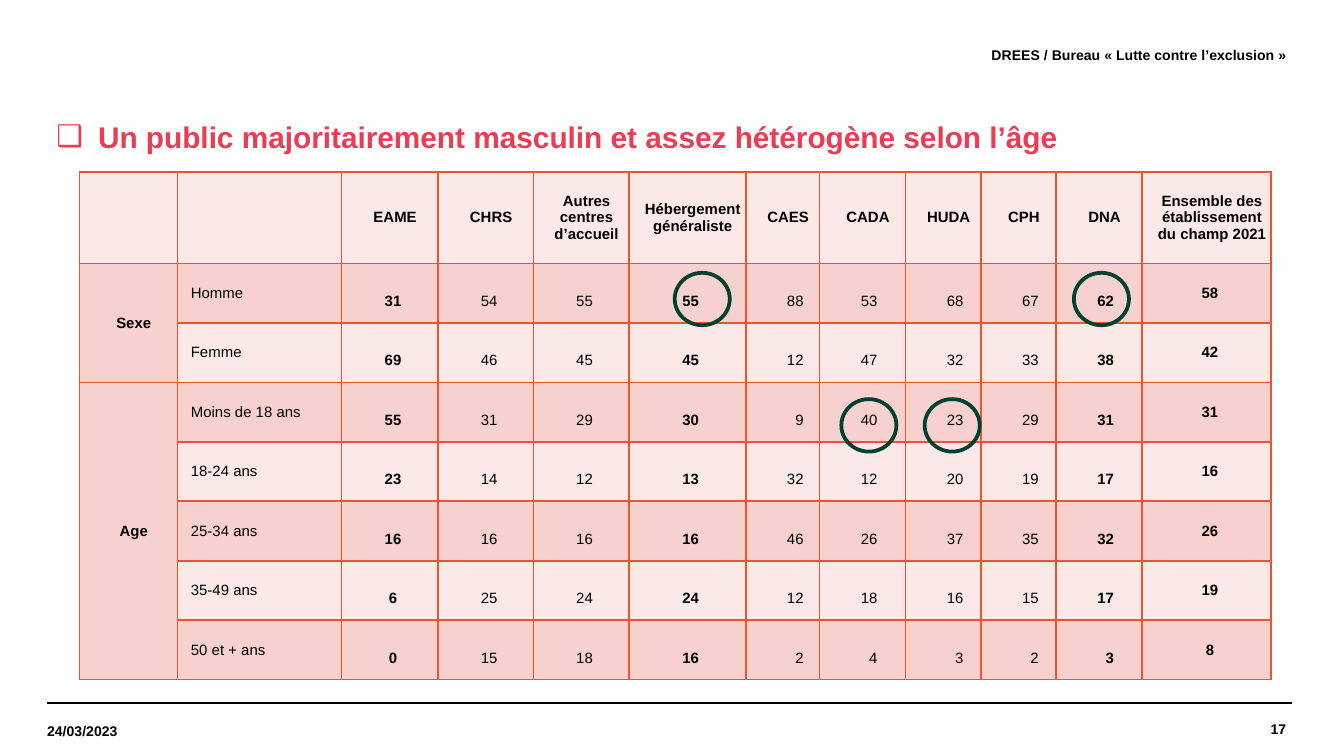
from dataclasses import dataclass

from lxml import etree
from pptx import Presentation
from pptx.dml.color import RGBColor
from pptx.enum.shapes import MSO_CONNECTOR, MSO_SHAPE
from pptx.enum.text import MSO_ANCHOR, PP_ALIGN
from pptx.oxml.ns import qn
from pptx.util import Inches, Pt

LEFT, MID, RIGHT = PP_ALIGN.LEFT, PP_ALIGN.CENTER, PP_ALIGN.RIGHT
CENTER = MSO_ANCHOR.MIDDLE
OVAL, LINE = MSO_SHAPE.OVAL, MSO_CONNECTOR.STRAIGHT


@dataclass
class Theme:
    font: str = "Arial"
    ink: str = "000000"
    title: str = "E83D54"
    pale: str = "FBE9E8"
    rose: str = "F7D1CE"
    edge: str = "EA5433"
    ring: str = "004130"
    big: float = 16
    body: float = 8
    small: float = 7.5


HEADS = ["", "", "EAME", "CHRS", "Autres centres d’accueil",
         "Hébergement généraliste", "CAES", "CADA", "HUDA", "CPH", "DNA",
         "Ensemble des établissement du champ 2021"]
ROWS = [
    ("Sexe", "Homme", 31, 54, 55, 55, 88, 53, 68, 67, 62, 58),
    ("", "Femme", 69, 46, 45, 45, 12, 47, 32, 33, 38, 42),
    ("Age", "Moins de 18 ans", 55, 31, 29, 30, 9, 40, 23, 29, 31, 31),
    ("", "18-24 ans", 23, 14, 12, 13, 32, 12, 20, 19, 17, 16),
    ("", "25-34 ans", 16, 16, 16, 16, 46, 26, 37, 35, 32, 26),
    ("", "35-49 ans", 6, 25, 24, 24, 12, 18, 16, 15, 17, 19),
    ("", "50 et + ans", 0, 15, 18, 16, 2, 4, 3, 2, 3, 8),
]
WIDTHS = [0.73, 1.22, 0.72, 0.71, 0.71, 0.87, 0.55, 0.64, 0.56, 0.56, 0.64, 0.96]
HEAD_H, TABLE_H = 0.68, 3.78
BOLD = {0, 2, 5, 10, 11}
NARROW = range(6, 11)
TOTAL = 11
DIGIT_END = 0.43  # right edge of the digits in narrow columns
RINGS = [(6.26, 2.97), (5.02, 2.03), (7.99, 2.03), (6.88, 2.97)]


class Page:
    def __init__(self, slide, theme):
        self.slide, self.theme = slide, theme

    def style(self, frame, size, color, bold, align):
        for para in frame.paragraphs:
            para.alignment = align
            for run in para.runs:
                font = run.font
                font.name, font.size, font.bold = self.theme.font, Pt(size), bold
                font.color.rgb = RGBColor.from_string(color)

    def bare(self, frame):
        frame.word_wrap = True
        frame.vertical_anchor = CENTER
        frame.margin_left = frame.margin_right = 0
        frame.margin_top = frame.margin_bottom = 0

    def title(self, text, left, top, width, height):
        shape = self.slide.shapes.title
        shape.left, shape.top = Inches(left), Inches(top)
        shape.width, shape.height = Inches(width), Inches(height)
        frame = shape.text_frame
        self.bare(frame)
        frame.text = text
        props = frame.paragraphs[0]._p.get_or_add_pPr()
        props.set("marL", str(Inches(0.41)))
        props.set("indent", str(Inches(-0.31)))
        etree.SubElement(props, qn("a:buFont")).set("typeface", self.theme.font)
        etree.SubElement(props, qn("a:buChar")).set("char", "❑")
        self.style(frame, self.theme.big, self.theme.title, True, LEFT)

    def label(self, text, left, top, width, height, align):
        box = self.slide.shapes.add_textbox(
            Inches(left), Inches(top), Inches(width), Inches(height))
        self.bare(box.text_frame)
        box.text_frame.text = text
        self.style(box.text_frame, self.theme.small, self.theme.ink, True, align)

    def rule(self, left, right, top):
        line = self.slide.shapes.add_connector(
            LINE, Inches(left), Inches(top), Inches(right), Inches(top))
        line.line.color.rgb = RGBColor.from_string(self.theme.ink)
        line.line.width = Pt(0.8)
        etree.SubElement(line._element.spPr, qn("a:effectLst"))

    def ring(self, left, top):
        oval = self.slide.shapes.add_shape(
            OVAL, Inches(left), Inches(top), Inches(0.41), Inches(0.39))
        oval.shadow.inherit = False
        oval.fill.background()
        oval.line.color.rgb = RGBColor.from_string(self.theme.ring)
        oval.line.width = Pt(2)

    def cell(self, cell, text, fill, bold, align, top=0.01, right=0.02):
        props = cell._tc.get_or_add_tcPr()
        for side in ("lnL", "lnR", "lnT", "lnB"):
            edge = etree.SubElement(props, qn("a:" + side), w=str(Pt(1)))
            solid = etree.SubElement(edge, qn("a:solidFill"))
            etree.SubElement(solid, qn("a:srgbClr"), val=self.theme.edge)
        cell.fill.solid()
        cell.fill.fore_color.rgb = RGBColor.from_string(fill)
        cell.vertical_anchor = CENTER
        cell.margin_left, cell.margin_right = Inches(0.1), Inches(right)
        cell.margin_top, cell.margin_bottom = Inches(top), Inches(0.01)
        cell.text = text
        self.style(cell.text_frame, self.theme.body, self.theme.ink, bold, align)

    def table(self, left, top):
        grid = self.slide.shapes.add_table(
            len(ROWS) + 1, len(WIDTHS), Inches(left), Inches(top),
            Inches(sum(WIDTHS)), Inches(TABLE_H)).table
        grid.first_row = grid.horz_banding = False
        for col, width in zip(grid.columns, WIDTHS):
            col.width = Inches(width)
        step = (TABLE_H - HEAD_H) / len(ROWS)
        for i, row in enumerate(grid.rows):
            row.height = Inches(step if i else HEAD_H)

        # Header row
        for j, head in enumerate(HEADS):
            self.cell(grid.cell(0, j), head, self.theme.pale, True, MID)

        # Groups, labels and figures
        for i, row in enumerate(ROWS, 1):
            band = self.theme.rose if i % 2 else self.theme.pale
            for j, value in enumerate(row):
                fill = band if j else self.theme.rose
                align = LEFT if j == 1 else RIGHT if j in NARROW else MID
                top = 0.13 if 1 < j < TOTAL else 0.01
                right = WIDTHS[j] - DIGIT_END if j in NARROW else 0.02 if j < 2 else 0.05
                self.cell(grid.cell(i, j), str(value), fill, j in BOLD,
                          align, top, right)
        for first, last in ((1, 2), (3, 7)):
            grid.cell(first, 0).merge(grid.cell(last, 0))


def main():
    deck = Presentation()
    deck.slide_width = Inches(10)
    deck.slide_height = deck.slide_width * 9 // 16
    page = Page(deck.slides.add_slide(deck.slide_layouts[5]), Theme())

    # Footer rules, header and footer text
    for left in (0.35, 0.39):
        page.rule(left, left + 9.22, 5.23)
    page.label("17", 8.09, 5.23, 1.48, 0.39, RIGHT)
    page.label("DREES / Bureau « Lutte contre l’exclusion »",
               3.14, 0.21, 6.43, 0.39, RIGHT)
    page.label("24/03/2023", 0.35, 5.25, 1.28, 0.38, LEFT)

    # Title, table and highlights
    page.title("Un public majoritairement masculin et assez hétérogène selon l’âge",
               0.32, 0.83, 9.13, 0.37)
    page.table(0.59, 1.28)
    for left, top in RINGS:
        page.ring(left, top)

    deck.save("out.pptx")


if __name__ == "__main__":
    main()
